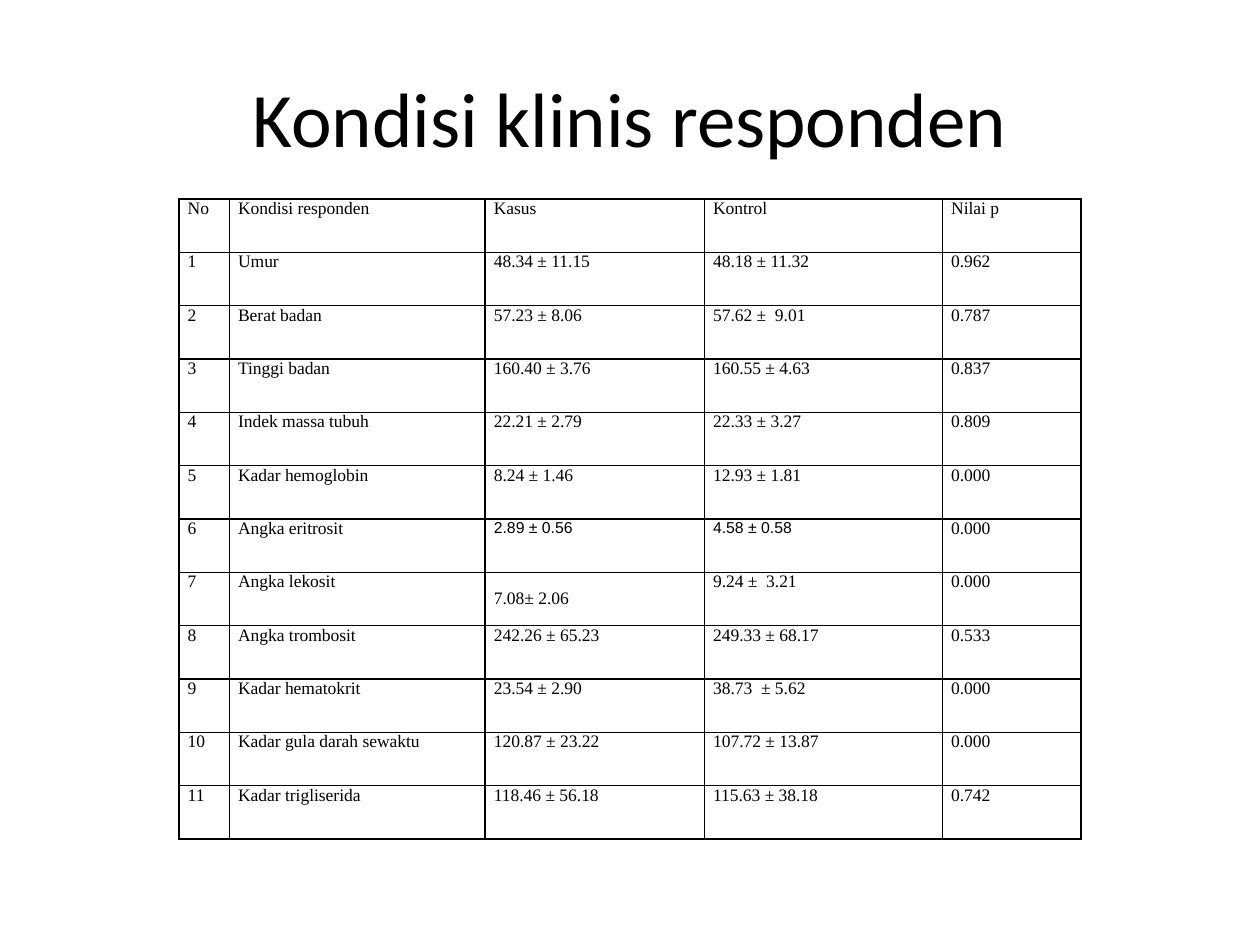
"""Build the slide comparing the clinical condition of case and control respondents."""
from dataclasses import dataclass

import lxml.etree
import pptx
import pptx.dml.color
import pptx.enum.text
import pptx.oxml
import pptx.oxml.ns
import pptx.util
from pptx.util import Inches


@dataclass(frozen=True)
class Theme:
    ink: str = "000000"
    title_font: str = "Calibri"
    body_font: str = "Times New Roman"
    accent_font: str = "Arial"
    title_size: int = 44
    body_size: int = 10
    accent_size: int = 9
    border: int = 1


theme = Theme()
ink = pptx.dml.color.RGBColor.from_string(theme.ink)
align = pptx.enum.text.PP_ALIGN
anchor = pptx.enum.text.MSO_ANCHOR


def apply_format(target, values):
    for name, value in values.items():
        setattr(target, name, value)


def add_borders(cell):
    properties = cell._tc.get_or_add_tcPr()
    for side in ("lnL", "lnR", "lnT", "lnB"):
        properties.append(pptx.oxml.parse_xml(
            f'<a:{side} {pptx.oxml.ns.nsdecls("a")} w="{pptx.util.Pt(theme.border)}">'
            f'<a:solidFill><a:srgbClr val="{theme.ink}"/></a:solidFill></a:{side}>'
        ))


headings = ["No", "Kondisi responden", "Kasus", "Kontrol", "Nilai p"]
conditions = [
    ("Umur", "48.34 ± 11.15", "48.18 ± 11.32", "0.962"),
    ("Berat badan", "57.23 ± 8.06", "57.62 ±  9.01", "0.787"),
    ("Tinggi badan", "160.40 ± 3.76", "160.55 ± 4.63", "0.837"),
    ("Indek massa tubuh", "22.21 ± 2.79", "22.33 ± 3.27", "0.809"),
    ("Kadar hemoglobin", "8.24 ± 1.46", "12.93 ± 1.81", "0.000"),
    ("Angka eritrosit", "2.89 ± 0.56", "4.58 ± 0.58", "0.000"),
    ("Angka lekosit", "7.08± 2.06", "9.24 ±  3.21", "0.000"),
    ("Angka trombosit", "242.26 ± 65.23", "249.33 ± 68.17", "0.533"),
    ("Kadar hematokrit", "23.54 ± 2.90", "38.73  ± 5.62", "0.000"),
    ("Kadar gula darah sewaktu", "120.87 ± 23.22", "107.72 ± 13.87", "0.000"),
    ("Kadar trigliserida", "118.46 ± 56.18", "115.63 ± 38.18", "0.742"),
]
rows = [headings] + [(str(number), *condition) for number, condition in enumerate(conditions, 1)]
column_widths = [0.4, 2.03, 1.74, 1.89, 1.1]
accent_cells = {(6, 2), (6, 3)}
centred_cell = (7, 2)

deck = pptx.Presentation()
apply_format(deck, {"slide_width": Inches(10), "slide_height": Inches(7.5)})
slide = deck.slides.add_slide(deck.slide_layouts[5])

heading = slide.shapes.title
apply_format(heading, {"left": Inches(0.5), "top": Inches(0.3),
                       "width": Inches(9), "height": Inches(1.25)})
heading.text_frame.text = "Kondisi klinis responden"
heading.text_frame.vertical_anchor = anchor.MIDDLE
heading.text_frame.paragraphs[0].alignment = align.CENTER
heading_font = heading.text_frame.paragraphs[0].runs[0].font
apply_format(heading_font, {"name": theme.title_font, "size": pptx.util.Pt(theme.title_size)})
heading_font.color.rgb = ink

clinical = slide.shapes.add_table(len(rows), len(headings), Inches(1.42), Inches(1.58),
                                  Inches(sum(column_widths)), Inches(5.08)).table
apply_format(clinical, {"first_row": False, "horz_banding": False})
for column, width in zip(clinical.columns, column_widths):
    column.width = Inches(width)

for row_index, row in enumerate(rows):
    for column_index, wording in enumerate(row):
        position = (row_index, column_index)
        cell = clinical.cell(*position)
        add_borders(cell)
        cell.fill.background()
        apply_format(cell, {
            "text": wording,
            "margin_left": Inches(0.07), "margin_right": Inches(0.07),
            "margin_top": 0, "margin_bottom": 0,
            "vertical_anchor": anchor.MIDDLE if position == centred_cell else anchor.TOP,
        })
        paragraph = cell.text_frame.paragraphs[0]
        measured = row_index > 0 and column_index > 1
        paragraph.alignment = align.JUSTIFY if measured else align.LEFT
        accented = position in accent_cells
        font = paragraph.runs[0].font
        apply_format(font, {
            "name": theme.accent_font if accented else theme.body_font,
            "size": pptx.util.Pt(theme.accent_size if accented else theme.body_size),
        })
        font.color.rgb = ink

deck.save("out.pptx")
